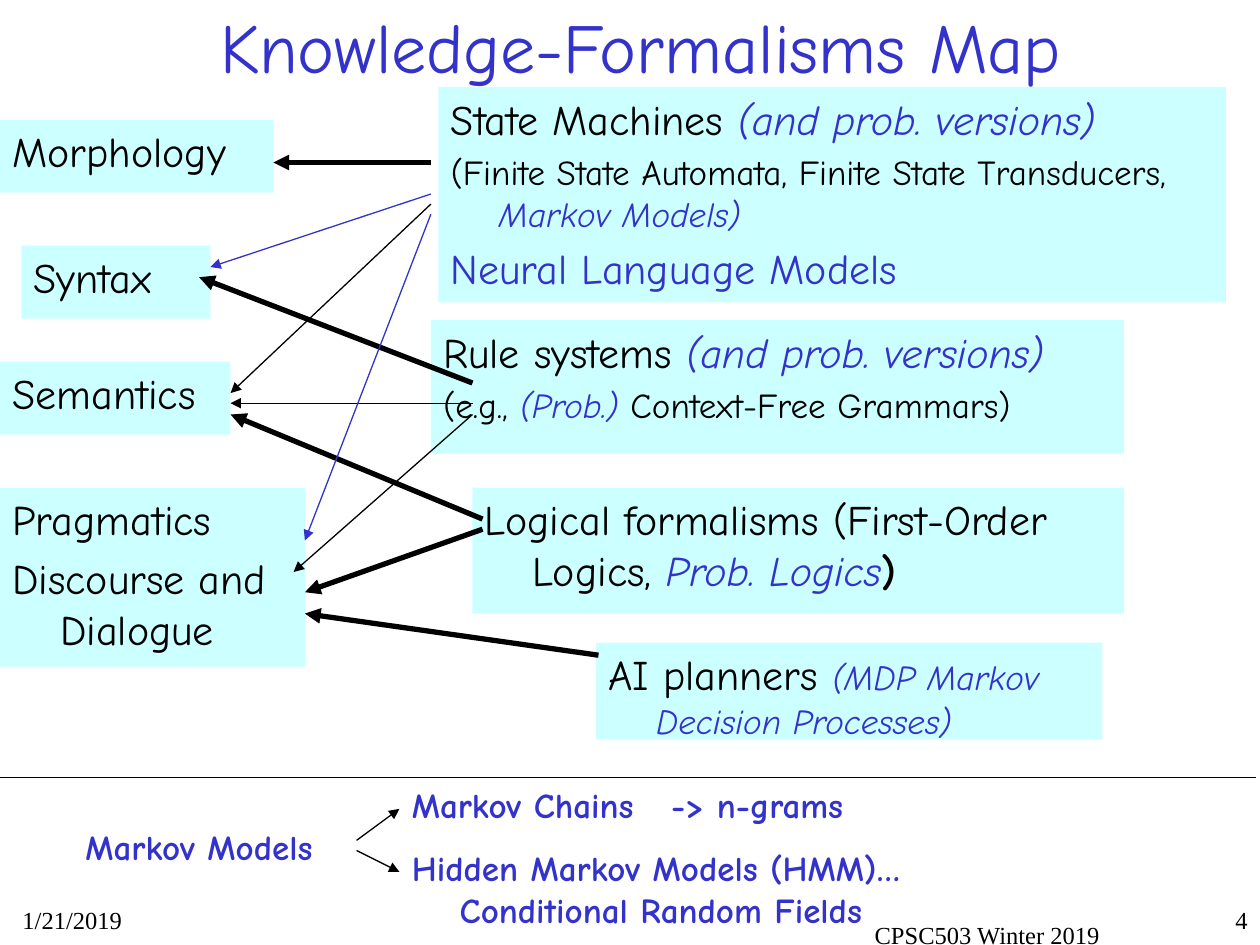
"""Build the Knowledge-Formalisms Map slide."""
from dataclasses import dataclass

from lxml.etree import SubElement
from pptx import Presentation
from pptx.dml.color import RGBColor
from pptx.enum.shapes import MSO_CONNECTOR, MSO_SHAPE
from pptx.enum.text import MSO_ANCHOR, PP_ALIGN
from pptx.oxml.ns import qn
from pptx.util import Inches, Pt


@dataclass(frozen=True)
class Theme:
    ink: RGBColor = RGBColor.from_string("000000")
    accent: RGBColor = RGBColor.from_string("3333CC")
    panel: RGBColor = RGBColor.from_string("CCFFFF")
    font: str = "Comic Neue"
    footer_font: str = "Times New Roman"
    title: int = 40
    heading: int = 24
    detail: int = 20
    footer: int = 14
    thick: float = 3
    thin: float = 0.75


THEME = Theme()


def text(content, size=THEME.heading, color=THEME.ink, italic=False, bold=False, font=THEME.font):
    return dict(content=content, size=size, color=color, italic=italic, bold=bold, font=font)


def aside(content, size=THEME.heading):
    return text(content, size=size, color=THEME.accent, italic=True)


def detail(content):
    return text(content, size=THEME.detail)


class MapSlide:
    def __init__(self, presentation, theme):
        self.theme = theme
        self.slide = presentation.slides.add_slide(presentation.slide_layouts[6])

    def set_text(self, shape, paragraphs, align=PP_ALIGN.LEFT, hanging=True):
        frame = shape.text_frame
        frame.word_wrap = True
        frame.vertical_anchor = MSO_ANCHOR.TOP
        for index, runs in enumerate(paragraphs):
            paragraph = frame.add_paragraph() if index else frame.paragraphs[0]
            paragraph.alignment = align
            if hanging:
                paragraph.space_before = Pt(0.2 * runs[0]["size"])
                properties = paragraph._p.get_or_add_pPr()
                properties.set("marL", str(Inches(0.38)))
                properties.set("indent", str(Inches(-0.38)))
            for style in runs:
                run = paragraph.add_run()
                run.text = style["content"]
                run.font.name = style["font"]
                run.font.size = Pt(style["size"])
                run.font.color.rgb = style["color"]
                run.font.italic = style["italic"]
                run.font.bold = style["bold"]

    def panel(self, box, *paragraphs):
        shape = self.slide.shapes.add_shape(MSO_SHAPE.RECTANGLE, *map(Inches, box))
        shape.shadow.inherit = False
        shape.fill.solid()
        shape.fill.fore_color.rgb = self.theme.panel
        shape.line.fill.background()
        self.set_text(shape, paragraphs)

    def label(self, box, run, **layout):
        shape = self.slide.shapes.add_textbox(*map(Inches, box))
        self.set_text(shape, [[run]], **layout)
        return shape

    def title(self, box, content):
        run = text(content, size=self.theme.title, color=self.theme.accent)
        frame = self.label(box, run, align=PP_ALIGN.CENTER, hanging=False).text_frame
        frame.vertical_anchor = MSO_ANCHOR.MIDDLE
        frame.margin_bottom = Inches(0.5)

    def note(self, box, content):
        self.label(box, text(content, size=self.theme.detail, color=self.theme.accent, bold=True))

    def footer(self, box, content, align):
        run = text(content, size=self.theme.footer, font=self.theme.footer_font)
        self.label(box, run, align=align, hanging=False)

    def line(self, start, end, width=THEME.thin, color=THEME.ink, arrow=True):
        connector = self.slide.shapes.add_connector(
            MSO_CONNECTOR.STRAIGHT, *map(Inches, (*start, *end)))
        connector.line.width = Pt(width)
        connector.line.color.rgb = color
        properties = connector._element.spPr
        if arrow:
            SubElement(properties.get_or_add_ln(), qn("a:tailEnd"), type="triangle")
        SubElement(properties, qn("a:effectLst"))


def main():
    presentation = Presentation()
    presentation.slide_width, presentation.slide_height = Inches(10), Inches(7.5)
    page = MapSlide(presentation, THEME)

    page.title((1, 0.25, 8.17, 0.67), "Knowledge-Formalisms Map")

    page.panel((3.75, 3.87, 5.17, 1), [
        text("Logical formalisms (First-Order Logics, "), aside("Prob. Logics"),
        text(")", bold=True)])
    page.panel((3.42, 2.54, 5.5, 1.06),
               [text("Rule systems "), aside("(and prob. versions)")],
               [detail("(e.g., "), aside("(Prob.)", THEME.detail),
                detail(" Context-Free Grammars)")])
    page.panel((3.48, 0.69, 6.25, 1.71),
               [text("State Machines "), aside("(and prob. versions)")],
               [detail("(Finite State Automata, Finite State Transducers, "),
                aside("Markov Models)", THEME.detail)],
               [text("Neural Language Models", color=THEME.accent)])
    page.panel((4.73, 5.1, 4.02, 0.77), [
        text("AI planners "), aside("(MDP Markov Decision Processes)", THEME.detail)])

    for box, topics in (
        ((0, 0.95, 2.17, 0.58), ["Morphology"]),
        ((0.17, 1.95, 1.5, 0.58), ["Syntax"]),
        ((0, 2.87, 1.83, 0.58), ["Semantics"]),
        ((0, 3.87, 2.42, 1.42), ["Pragmatics", "Discourse and Dialogue"]),
    ):
        page.panel(box, *([text(topic)] for topic in topics))

    for start, end in (
        ((3.42, 1.29), (2.17, 1.29)),
        ((3.75, 3.04), (1.58, 2.2)),
        ((3.83, 4.12), (1.83, 3.29)),
        ((3.83, 4.2), (2.42, 4.7)),
        ((4.75, 5.2), (2.42, 4.87)),
    ):
        page.line(start, end, width=THEME.thick)
    for start, end in (
        ((3.42, 1.62), (1.83, 3.12)),
        ((3.75, 3.2), (1.83, 3.2)),
        ((3.75, 3.29), (2.33, 4.54)),
        ((2.83, 6.67), (3.17, 6.42)),
        ((2.83, 6.75), (3.17, 6.92)),
    ):
        page.line(start, end)
    for start, end in (((3.42, 1.7), (2.42, 4.29)), ((3.42, 1.54), (1.67, 2.12))):
        page.line(start, end, color=THEME.accent)
    page.line((-0.03, 6.17), (9.97, 6.17), arrow=False)

    page.note((0.58, 6.5, 2.33, 0.58), "Markov Models")
    page.note((3.17, 6.17, 4.75, 0.58), "Markov Chains   -> n-grams")
    page.note((3.17, 6.67, 5.08, 0.58), "Hidden Markov Models (HMM)… Conditional Random Fields")

    page.footer((0.08, 7.13, 2.08, 0.5), "1/21/2019", PP_ALIGN.LEFT)
    page.footer((6.25, 7.25, 3.17, 0.5), "CPSC503 Winter 2019", PP_ALIGN.CENTER)
    page.footer((7.92, 7.13, 2.08, 0.5), "4", PP_ALIGN.RIGHT)

    presentation.save("out.pptx")


if __name__ == "__main__":
    main()
